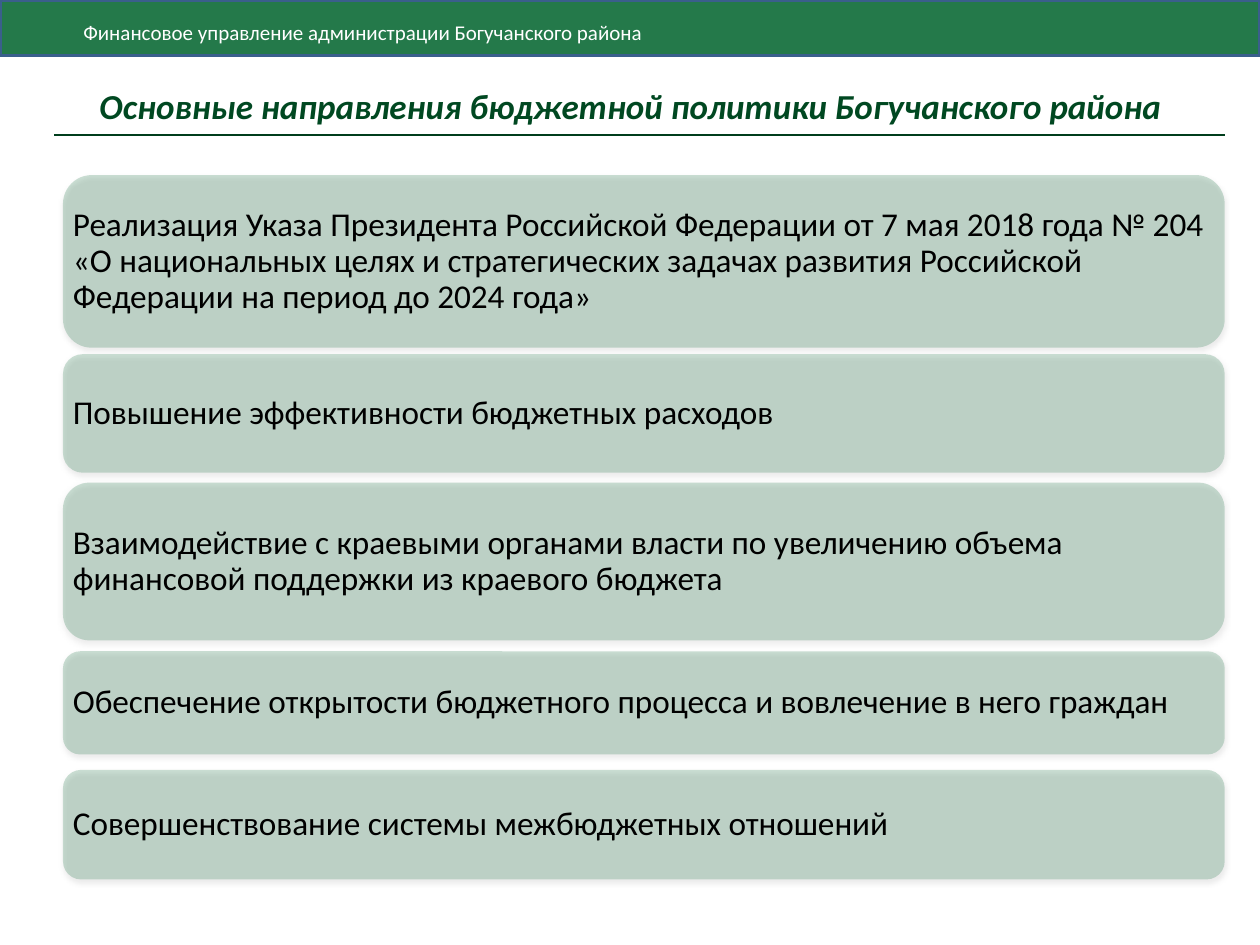
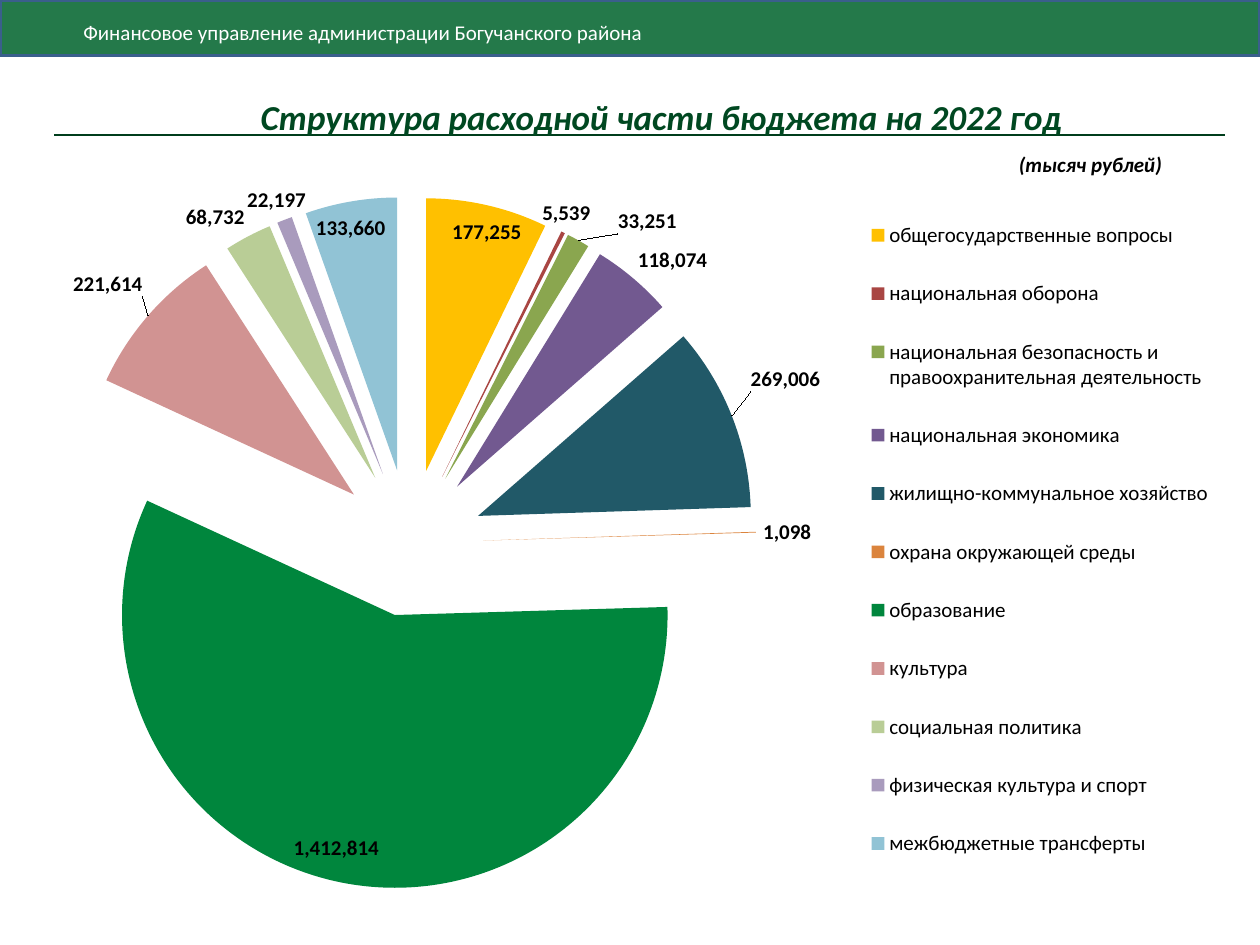
"""Build two slides on the budget policy and spending of Boguchansky district."""
from dataclasses import dataclass

from lxml.etree import SubElement
from pptx import Presentation
from pptx.chart.data import CategoryChartData
from pptx.dml.color import RGBColor
from pptx.enum.chart import XL_CHART_TYPE as ChartType
from pptx.enum.chart import XL_LABEL_POSITION as LabelPosition
from pptx.enum.chart import XL_LEGEND_POSITION as LegendPosition
from pptx.enum.shapes import MSO_CONNECTOR as Connector
from pptx.enum.shapes import MSO_SHAPE as Shape
from pptx.enum.text import MSO_ANCHOR as Anchor
from pptx.enum.text import PP_ALIGN as Align
from pptx.oxml import parse_xml
from pptx.oxml.ns import nsdecls, qn
from pptx.util import Cm, Pt

DEPARTMENT = "Финансовое управление администрации Богучанского района"

POLICY_TITLE = "Основные направления бюджетной политики Богучанского района"
POLICY_TITLE_AREA = (0.51, 1.73, 24.41, 0.79)
DIRECTIONS = [
    ("Реализация Указа Президента Российской Федерации от 7 мая 2018 года № 204 "
     "«О национальных целях и стратегических задачах развития Российской Федерации "
     "на период до 2024 года»", 3.53, 3.48),
    ("Повышение эффективности бюджетных расходов", 7.14, 2.39),
    ("Взаимодействие с краевыми органами власти по увеличению объема "
     "финансовой поддержки из краевого бюджета", 9.73, 3.18),
    ("Обеспечение открытости бюджетного процесса и вовлечение в него граждан", 13.13, 2.08),
    ("Совершенствование системы межбюджетных отношений", 15.52, 2.21),
]

SPENDING_TITLE = "Структура расходной части бюджета на 2022 год"
SPENDING_TITLE_AREA = (1.27, 0.76, 24.13, 3.18)
UNIT = "(тысяч рублей)"
UNIT_AREA = (20.29, 2.92, 3.99, 0.76)
CHART_AREA = (0.51, 3.53, 24.21, 14.4)
INSIDE, OUTSIDE = LabelPosition.INSIDE_END, LabelPosition.OUTSIDE_END
SPENDING = [
    ("общегосударственные вопросы", 177255, "FFC000", INSIDE, (0.03, 0.01)),
    ("национальная оборона", 5539, "A94643", OUTSIDE, (-0.02, 0)),
    ("национальная безопасность и правоохранительная деятельность", 33251, "8AA64F",
     OUTSIDE, (0.03, 0)),
    ("национальная экономика", 118074, "725990", OUTSIDE, None),
    ("жилищно-коммунальное хозяйство", 269006, "215968", OUTSIDE, (0.01, -0.03)),
    ("охрана окружающей среды", 1098, "DB843D", OUTSIDE, None),
    ("образование", 1412814, "00863D", INSIDE, (-0.04, -0.02)),
    ("культура", 221614, "D19392", OUTSIDE, (0, -0.02)),
    ("социальная политика", 68732, "B9CD96", OUTSIDE, None),
    ("физическая культура и спорт", 22197, "A99BBD", OUTSIDE, (0.02, 0)),
    ("межбюджетные трансферты", 133660, "91C3D5", INSIDE, (-0.03, 0.01)),
]


@dataclass(frozen=True)
class Theme:
    """Colours and type sizes of the deck."""
    font: str = "Calibri"
    green: str = "00642D"
    title: str = "004821"
    rule: str = "003E1C"
    band_edge: str = "3A5F8C"
    white: str = "FFFFFF"
    black: str = "000000"
    title_size: int = 20
    body_size: int = 19
    small_size: int = 12


THEME = Theme()


def rgb(value):
    """Turn a hex string into a colour."""
    return RGBColor.from_string(value)


def style_font(font, size, color=THEME.black, bold=False, italic=False):
    """Set the deck's typeface and the given format on a font."""
    font.name, font.size = THEME.font, Pt(size)
    font.bold, font.italic = bold, italic
    font.color.rgb = rgb(color)


def write_text(box, text, *, align=Align.LEFT, anchor=Anchor.MIDDLE, spacing=None,
               margins=(0.25, 0.13, 0.25, 0.13), **format):
    """Fill a shape with one formatted paragraph; margins run left, top, right, bottom."""
    frame = box.text_frame
    frame.word_wrap = True
    frame.vertical_anchor = anchor
    (frame.margin_left, frame.margin_top,
     frame.margin_right, frame.margin_bottom) = map(Cm, margins)
    para = frame.paragraphs[0]
    para.alignment = align
    para.line_spacing = spacing
    span = para.add_run()
    span.text = text
    style_font(span.font, **format)


def add_text(page, area, text, **format):
    """Add a text box over an area."""
    write_text(page.shapes.add_textbox(*map(Cm, area)), text, **format)


def add_panel(page, kind, area, opacity):
    """Add a see-through green shape without line or shadow."""
    panel = page.shapes.add_shape(kind, *map(Cm, area))
    panel.shadow.inherit = False
    panel.fill.solid()
    panel.fill.fore_color.rgb = rgb(THEME.green)
    color = panel._element.spPr.find(qn("a:solidFill"))[0]
    SubElement(color, qn("a:alpha"), val=str(opacity * 1000))
    panel.line.fill.background()
    return panel


def add_shadow(panel):
    """Give a panel a soft shadow below it."""
    effects = panel._element.spPr.find(qn("a:effectLst"))
    effects.append(parse_xml(
        f'<a:outerShdw {nsdecls("a")} blurRad="{Pt(3.1)}" dist="{Pt(1.6)}" dir="5400000" '
        f'rotWithShape="0"><a:srgbClr val="{THEME.black}"><a:alpha val="38000"/>'
        '</a:srgbClr></a:outerShdw>'))


def add_page(deck, title, title_area):
    """Add a slide with the department band, the rule and a title."""
    page = deck.slides.add_slide(deck.slide_layouts[6])
    band = add_panel(page, Shape.RECTANGLE, (0, 0, 25.4, 1.12), 86)
    band.line.color.rgb = rgb(THEME.band_edge)
    band.line.width = Pt(2)
    write_text(band, DEPARTMENT, margins=(1.68, 0.17, 0.25, 0),
               size=THEME.small_size, color=THEME.white)
    rule = page.shapes.add_connector(Connector.STRAIGHT, *map(Cm, (1.09, 2.72, 24.69, 2.72)))
    rule.line.color.rgb = rgb(THEME.rule)
    rule.line.width = Pt(1.25)
    SubElement(rule._element.spPr, qn("a:effectLst"))
    add_text(page, title_area, title, align=Align.CENTER, size=THEME.title_size,
             color=THEME.title, bold=True, italic=True)
    return page


def manual_layout(**values):
    """Make a chart layout element from its fractions and modes."""
    parts = "".join(f'<c:{name} val="{value}"/>' for name, value in values.items())
    return parse_xml(f'<c:layout {nsdecls("c")}><c:manualLayout>{parts}'
                     '</c:manualLayout></c:layout>')


def add_spending_chart(page):
    """Add the exploded pie of spending with its legend."""
    data = CategoryChartData(number_format="#,##0")
    data.categories = [row[0] for row in SPENDING]
    data.add_series("Расходы", [row[1] for row in SPENDING])
    chart = page.shapes.add_chart(ChartType.PIE, *map(Cm, CHART_AREA), data).chart
    style_font(chart.font, THEME.small_size)
    chart.has_title = False

    chart.has_legend = True
    legend = chart.legend
    legend.position = LegendPosition.RIGHT
    legend.include_in_layout = False
    style_font(legend.font, THEME.small_size)
    legend._element.find(qn("c:legendPos")).addnext(manual_layout(
        xMode="edge", yMode="edge", x=0.69, y=0.02, w=0.31, h=0.98))

    area = chart._chartSpace.chart.plotArea
    for layout in area.findall(qn("c:layout")):
        area.remove(layout)
    area.insert(0, manual_layout(layoutTarget="inner", xMode="edge", yMode="edge",
                                 x=0, y=0.03, w=0.64, h=0.97))

    plot = chart.plots[0]
    plot.vary_by_categories = True
    series = plot.series[0]
    series._element.find(qn("c:tx")).addnext(
        parse_xml(f'<c:explosion {nsdecls("c")} val="27"/>'))
    labels = series.data_labels
    labels.show_value = True
    labels.number_format, labels.number_format_is_linked = "#,##0", False
    style_font(labels.font, THEME.small_size, bold=True)
    for index, (_, _, color, position, shift) in enumerate(SPENDING):
        point = series.points[index]
        point.format.fill.solid()
        point.format.fill.fore_color.rgb = rgb(color)
        style_font(point.data_label.font, THEME.small_size, bold=True)
        point.data_label.position = position
        if shift:
            label = labels._element.findall(qn("c:dLbl"))[index]
            label.find(qn("c:idx")).addnext(manual_layout(x=shift[0], y=shift[1]))


def main():
    """Build and save the deck."""
    deck = Presentation()
    deck.slide_width, deck.slide_height = Cm(25.4), Cm(19.05)

    page = add_page(deck, POLICY_TITLE, POLICY_TITLE_AREA)
    for text, top, height in DIRECTIONS:
        area = (1.27, top, 23.42, height)
        add_shadow(add_panel(page, Shape.ROUNDED_RECTANGLE, area, 20))
        add_text(page, area, text, spacing=0.9, margins=(0.2,) * 4, size=THEME.body_size)

    page = add_page(deck, SPENDING_TITLE, SPENDING_TITLE_AREA)
    add_spending_chart(page)
    add_text(page, UNIT_AREA, UNIT, anchor=Anchor.TOP, size=THEME.small_size,
             bold=True, italic=True)
    deck.save("out.pptx")


if __name__ == "__main__":
    main()
